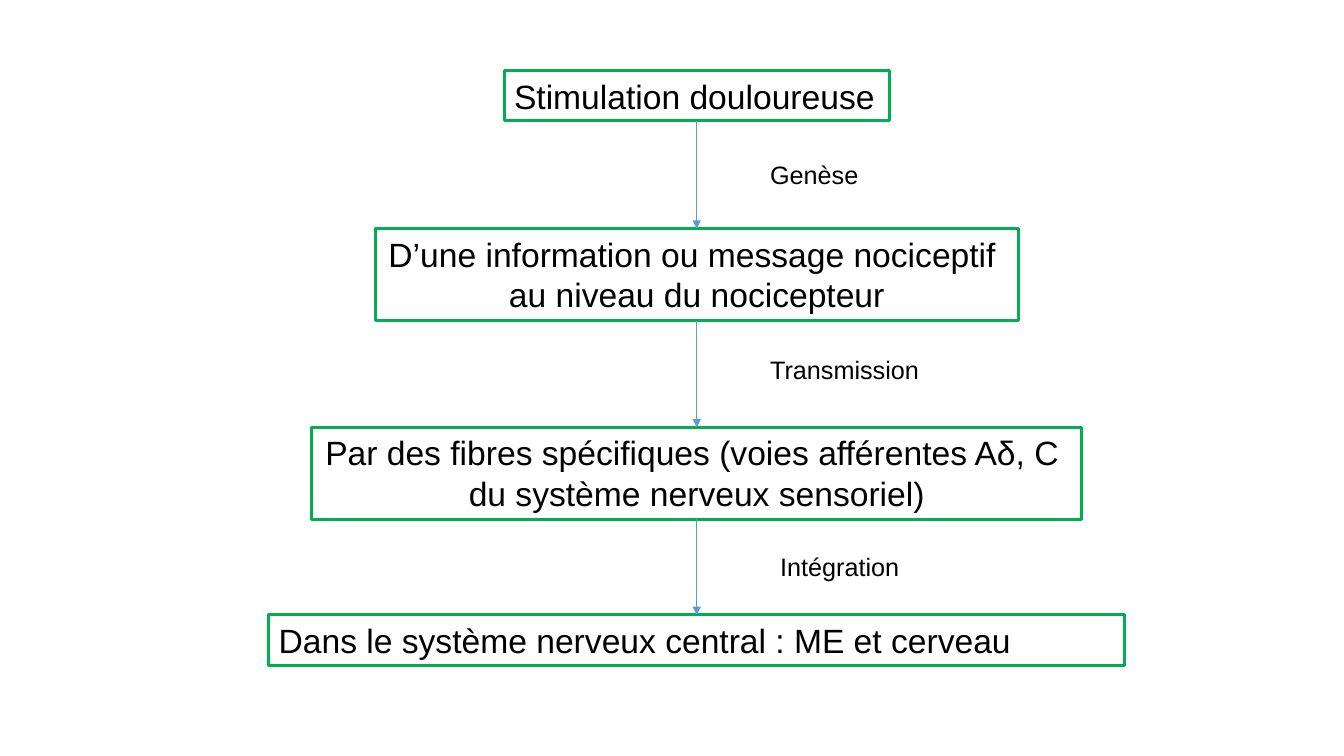
from itertools import pairwise

from lxml.etree import SubElement
from pptx import Presentation
from pptx.dml.color import RGBColor
from pptx.enum.shapes import MSO_CONNECTOR
from pptx.enum.text import MSO_AUTO_SIZE, PP_ALIGN
from pptx.oxml.ns import qn
from pptx.util import Inches, Pt

GREEN = RGBColor(0x00, 0xB0, 0x50)
BLUE = RGBColor(0x5B, 0x9B, 0xD5)
BLACK = RGBColor(0, 0, 0)

AXIS = 6.91
LINE_HEIGHT = 0.41
PADDING = 0.09

# top, width, wrap, alignment, lines
STAGES = [
    (0.7, 3.82, False, PP_ALIGN.LEFT, ["Stimulation douloureuse"]),
    (2.27, 6.38, False, PP_ALIGN.CENTER,
     ["D’une information ou message nociceptif ", "au niveau du nocicepteur"]),
    (4.24, 7.64, False, PP_ALIGN.CENTER,
     ["Par des fibres spécifiques (voies afférentes Aδ, C ",
      "du système nerveux sensoriel)"]),
    (6.1, 8.49, True, PP_ALIGN.LEFT,
     ["Dans le système nerveux central : ME et cerveau"]),
]
# left, top, width, text
PROCESSES = [
    (7.54, 1.53, 1.16, "Genèse"),
    (7.54, 3.47, 1.76, "Transmission"),
    (7.64, 5.42, 1.46, "Intégration"),
]


def add_text(slide, left, top, width, height, lines, size, wrap=False,
             alignment=PP_ALIGN.LEFT):
    box = slide.shapes.add_textbox(
        Inches(left), Inches(top), Inches(width), Inches(height))
    frame = box.text_frame
    frame.word_wrap = wrap
    frame.auto_size = MSO_AUTO_SIZE.SHAPE_TO_FIT_TEXT
    for index, line in enumerate(lines):
        paragraph = frame.add_paragraph() if index else frame.paragraphs[0]
        paragraph.alignment = alignment
        run = paragraph.add_run()
        run.text = line
        run.font.name = "Arial"
        run.font.size = Pt(size)
        run.font.color.rgb = BLACK
    return box


def stage_height(lines):
    return LINE_HEIGHT * len(lines) + PADDING


def add_arrow(slide, start, end):
    arrow = slide.shapes.add_connector(
        MSO_CONNECTOR.STRAIGHT,
        Inches(AXIS), Inches(start), Inches(AXIS), Inches(end))
    arrow.line.color.rgb = BLUE
    arrow.line.width = Pt(0.5)
    SubElement(arrow.line._get_or_add_ln(), qn("a:tailEnd"), type="triangle")
    SubElement(arrow._element.spPr, qn("a:effectLst"))


def main():
    presentation = Presentation()
    presentation.slide_width = Inches(13.33)
    presentation.slide_height = Inches(7.5)
    slide = presentation.slides.add_slide(presentation.slide_layouts[6])

    for top, width, wrap, alignment, lines in STAGES:
        stage = add_text(slide, AXIS - width / 2, top, width,
                         stage_height(lines), lines, 24, wrap, alignment)
        stage.line.color.rgb = GREEN
        stage.line.width = Pt(2.25)

    for (top, _, _, _, lines), following in pairwise(STAGES):
        add_arrow(slide, top + stage_height(lines), following[0])

    for left, top, width, process in PROCESSES:
        add_text(slide, left, top, width, 0.4, [process], 18)

    presentation.save("out.pptx")


if __name__ == "__main__":
    main()
